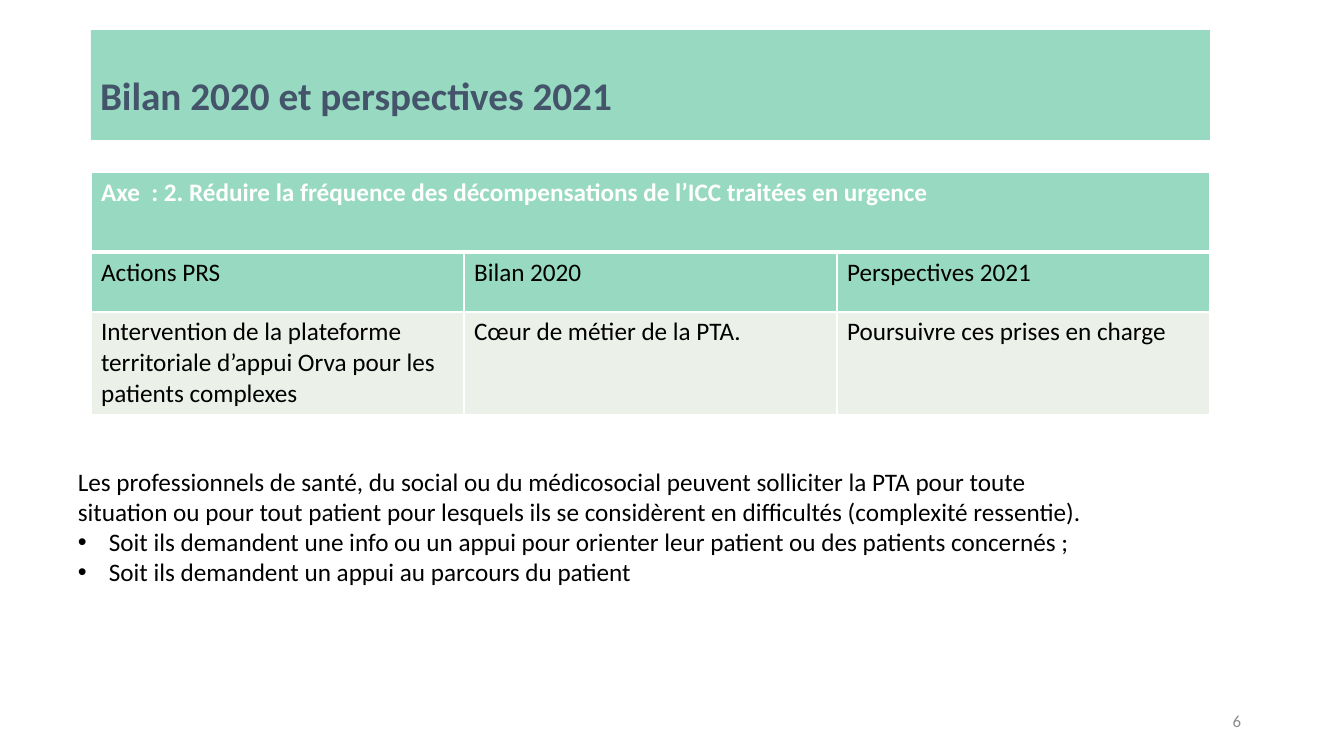
from dataclasses import dataclass

from pptx import Presentation
from pptx.dml.color import RGBColor
from pptx.enum.text import MSO_ANCHOR, MSO_AUTO_SIZE, PP_ALIGN
from pptx.oxml.ns import qn
from pptx.util import Pt
from lxml.etree import SubElement

SCALE = 914400 / 100.8


@dataclass(frozen=True)
class Theme:
    """Colours, font and type sizes of the slide."""
    font: str = "Calibri"
    mint: str = "98DAC1"
    pale: str = "EBF1E9"
    slate: str = "44546A"
    white: str = "FFFFFF"
    black: str = "000000"
    grey: str = "8C8C8C"
    head: int = 28
    body: int = 18
    foot: int = 12


THEME = Theme()
TITLE = "Bilan 2020 et perspectives 2021"
AXIS = "Axe  : 2. Réduire la fréquence des décompensations de l’ICC traitées en urgence"
ROWS = [
    [AXIS, "", ""],
    ["Actions PRS", "Bilan 2020", "Perspectives 2021"],
    ["Intervention de la plateforme territoriale d’appui Orva pour les patients complexes",
     "Cœur de métier de la PTA.", "Poursuivre ces prises en charge"],
]
INTRO = ("Les professionnels de santé, du social ou du médicosocial peuvent solliciter la PTA "
         "pour toute situation ou pour tout patient pour lesquels ils se considèrent "
         "en difficultés (complexité ressentie).")
POINTS = [
    "Soit ils demandent une info ou un appui pour orienter leur patient ou des patients concernés ;",
    "Soit ils demandent un appui au parcours du patient",
]


def px(n):
    """Turn pixels into EMU."""
    return round(n * SCALE)


def style(par, size, color, bold=False):
    """Set the font of a paragraph."""
    font = par.font
    font.name, font.size, font.bold = THEME.font, Pt(size), bold
    font.color.rgb = RGBColor.from_string(color)


def rule(cell, side, width):
    """Draw one white border of a cell."""
    line = SubElement(cell._tc.get_or_add_tcPr(), qn(f"a:ln{side}"), w=str(Pt(width)))
    SubElement(SubElement(line, qn("a:solidFill")), qn("a:srgbClr"), val=THEME.white)


def bullet(par, indent):
    """Give a paragraph a hanging bullet."""
    props = par._p.get_or_add_pPr()
    props.set("marL", str(px(indent)))
    props.set("indent", str(-px(indent)))
    SubElement(props, qn("a:buFont"), typeface="Arial")
    SubElement(props, qn("a:buChar"), char="•")


def banner(slide, x, y, w, h):
    """Place the title on its mint band."""
    title = slide.shapes.title
    title.left, title.top, title.width, title.height = map(px, (x, y, w, h))
    title.fill.solid()
    title.fill.fore_color.rgb = RGBColor.from_string(THEME.mint)
    frame = title.text_frame
    frame.text = TITLE
    frame.auto_size = MSO_AUTO_SIZE.NONE
    frame.vertical_anchor = MSO_ANCHOR.MIDDLE
    frame.margin_left = frame.margin_right = px(9)
    frame.margin_top, frame.margin_bottom = px(28), px(4)
    par = frame.paragraphs[0]
    par.alignment, par.line_spacing = PP_ALIGN.LEFT, 0.93
    style(par, THEME.head, THEME.slate, True)


def grid(slide, x, y, w, heights):
    """Place the table of actions."""
    count = len(ROWS[0])
    table = slide.shapes.add_table(
        len(ROWS), count, px(x), px(y), px(w), px(sum(heights))).table
    for col in table.columns:
        col.width = px(w / count)
    fills = THEME.mint, THEME.mint, THEME.pale
    for r, (texts, high, fill) in enumerate(zip(ROWS, heights, fills)):
        table.rows[r].height = px(high)
        for c, text in enumerate(texts):
            cell = table.cell(r, c)
            cell.text = text
            ink = THEME.black if r else THEME.white
            style(cell.text_frame.paragraphs[0], THEME.body, ink, r == 0)
            for side, width in zip("LRTB", (1, 1, 3 if r == 1 else 1, 1 if r else 3)):
                rule(cell, side, width)
            cell.fill.solid()
            cell.fill.fore_color.rgb = RGBColor.from_string(fill)
    table.cell(0, 0).merge(table.cell(0, count - 1))


def label(slide, x, y, w, h):
    """Add a wrapping text box and return its frame."""
    frame = slide.shapes.add_textbox(*map(px, (x, y, w, h))).text_frame
    frame.word_wrap = True
    return frame


def notice(slide, x, y, w, h):
    """Place the paragraph and its bullets."""
    frame = label(slide, x, y, w, h)
    frame.text = "\n".join([INTRO, *POINTS])
    for par in frame.paragraphs:
        style(par, THEME.body, THEME.black)
    for par in frame.paragraphs[1:]:
        bullet(par, 31)


def folio(slide, x, y, w, h):
    """Place the page number."""
    frame = label(slide, x, y, w, h)
    frame.text = "6"
    frame.vertical_anchor = MSO_ANCHOR.MIDDLE
    par = frame.paragraphs[0]
    par.alignment = PP_ALIGN.RIGHT
    style(par, THEME.foot, THEME.grey)


def main():
    """Build and save the slide."""
    deck = Presentation()
    deck.slide_width, deck.slide_height = px(1344), px(756)
    slide = deck.slides.add_slide(deck.slide_layouts[5])
    banner(slide, 91, 30, 1119, 110)
    grid(slide, 91, 172, 1119, (80, 60, 101))
    notice(slide, 68, 461, 1026, 163)
    folio(slide, 949, 701, 302, 40)
    deck.save("out.pptx")


if __name__ == "__main__":
    main()
